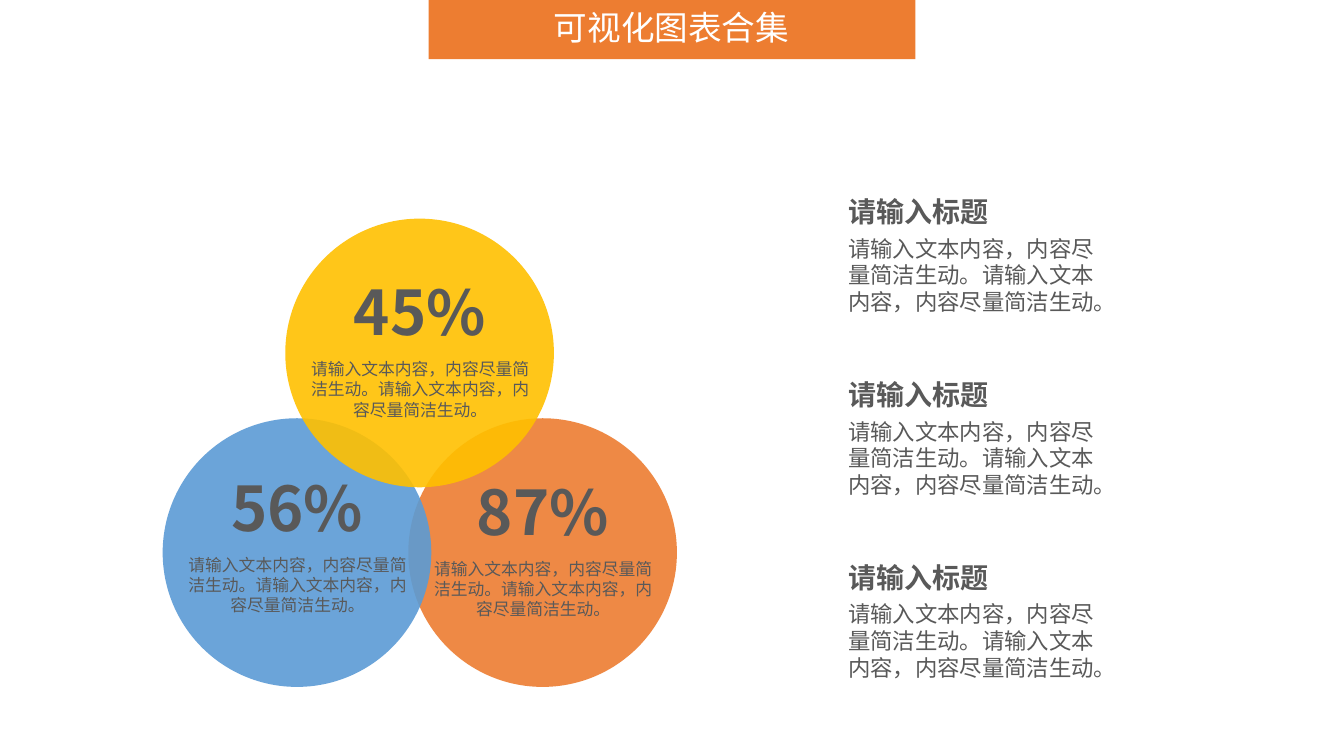
from dataclasses import dataclass

from pptx import Presentation
from pptx.dml.color import RGBColor
from pptx.enum import shapes, text
from pptx.oxml import ns, xmlchemy
from pptx.util import Cm, Pt


@dataclass(frozen=True)
class Theme:
    orange: str = "ED7D31"
    blue: str = "5B9BD5"
    yellow: str = "FFC000"
    grey: str = "595959"
    white: str = "FFFFFF"
    heading_font: str = "Noto Sans CJK SC"
    body_font: str = "Arial"
    banner_size: int = 24
    percent_size: int = 44
    heading_size: int = 20
    body_size: int = 16
    caption_size: int = 12


THEME = Theme()
BODY = "请输入文本内容，内容尽量简洁生动。请输入文本内容，内容尽量简洁生动。"
DIAMETER = 6.77
# left, top, colour, percentage, vertical shift of the text
CIRCLES = [
    (10.29, 10.54, THEME.orange, "87%", 0),
    (4.1, 10.54, THEME.blue, "56%", -0.1),
    (7.19, 5.51, THEME.yellow, "45%", 0),
]
NOTE_LEFT, NOTE_TOP, NOTE_PITCH, NOTE_COUNT = 21.13, 4.77, 4.61, 3


def add_filled(slide, kind, left, top, width, height, colour, opacity=100):
    """Add a borderless preset shape; opacity is a percentage."""
    shape = slide.shapes.add_shape(kind, Cm(left), Cm(top), Cm(width), Cm(height))
    shape.shadow.inherit = False
    shape.line.fill.background()
    shape.fill.solid()
    shape.fill.fore_color.rgb = RGBColor.from_string(colour)
    if opacity < 100:
        colour_element = shape.fill._xPr.find(".//" + ns.qn("a:srgbClr"))
        alpha = xmlchemy.OxmlElement("a:alpha")
        alpha.set("val", str(opacity * 1000))
        colour_element.append(alpha)


def add_text(slide, left, top, width, height, words, size, font_name,
             colour=THEME.grey, bold=False, align=text.PP_ALIGN.LEFT):
    box = slide.shapes.add_textbox(Cm(left), Cm(top), Cm(width), Cm(height))
    box.text_frame.word_wrap = True
    paragraph = box.text_frame.paragraphs[0]
    paragraph.alignment = align
    run = paragraph.add_run()
    run.text = words
    for name, value in {"size": Pt(size), "name": font_name, "bold": bold}.items():
        setattr(run.font, name, value)
    run.font.color.rgb = RGBColor.from_string(colour)
    east_asian = xmlchemy.OxmlElement("a:ea")
    east_asian.set("typeface", font_name)
    run.font._element.append(east_asian)


def add_banner(slide):
    add_filled(slide, shapes.MSO_SHAPE.RECTANGLE, 10.8, -0.08, 12.27, 1.57, THEME.orange)
    add_text(slide, 11.63, 0.05, 10.59, 1.27, "可视化图表合集", THEME.banner_size,
             THEME.heading_font, colour=THEME.white, align=text.PP_ALIGN.CENTER)


def add_circle_text(slide, left, top, percentage):
    add_text(slide, left + 1.37, top + 1.27, 4.04, 2.13, percentage, THEME.percent_size,
             THEME.heading_font, bold=True, align=text.PP_ALIGN.CENTER)
    add_text(slide, left + 0.3, top + 3.41, 6.2, 2.31, BODY, THEME.caption_size,
             THEME.body_font, align=text.PP_ALIGN.CENTER)


def add_note(slide, top):
    add_text(slide, NOTE_LEFT, top, 4.04, 1.12, "请输入标题", THEME.heading_size,
             THEME.heading_font, bold=True)
    add_text(slide, NOTE_LEFT, top + 1.02, 6.93, 3.07, BODY, THEME.body_size,
             THEME.body_font)


def main():
    presentation = Presentation()
    presentation.slide_width, presentation.slide_height = Cm(33.87), Cm(19.05)
    slide = presentation.slides.add_slide(presentation.slide_layouts[6])
    add_banner(slide)
    for left, top, colour, _, _ in CIRCLES:
        add_filled(slide, shapes.MSO_SHAPE.OVAL, left, top, DIAMETER, DIAMETER, colour, 90)
    for left, top, _, percentage, shift in reversed(CIRCLES):
        add_circle_text(slide, left, top + shift, percentage)
    for index in range(NOTE_COUNT):
        add_note(slide, NOTE_TOP + index * NOTE_PITCH)
    presentation.save("out.pptx")


if __name__ == "__main__":
    main()
